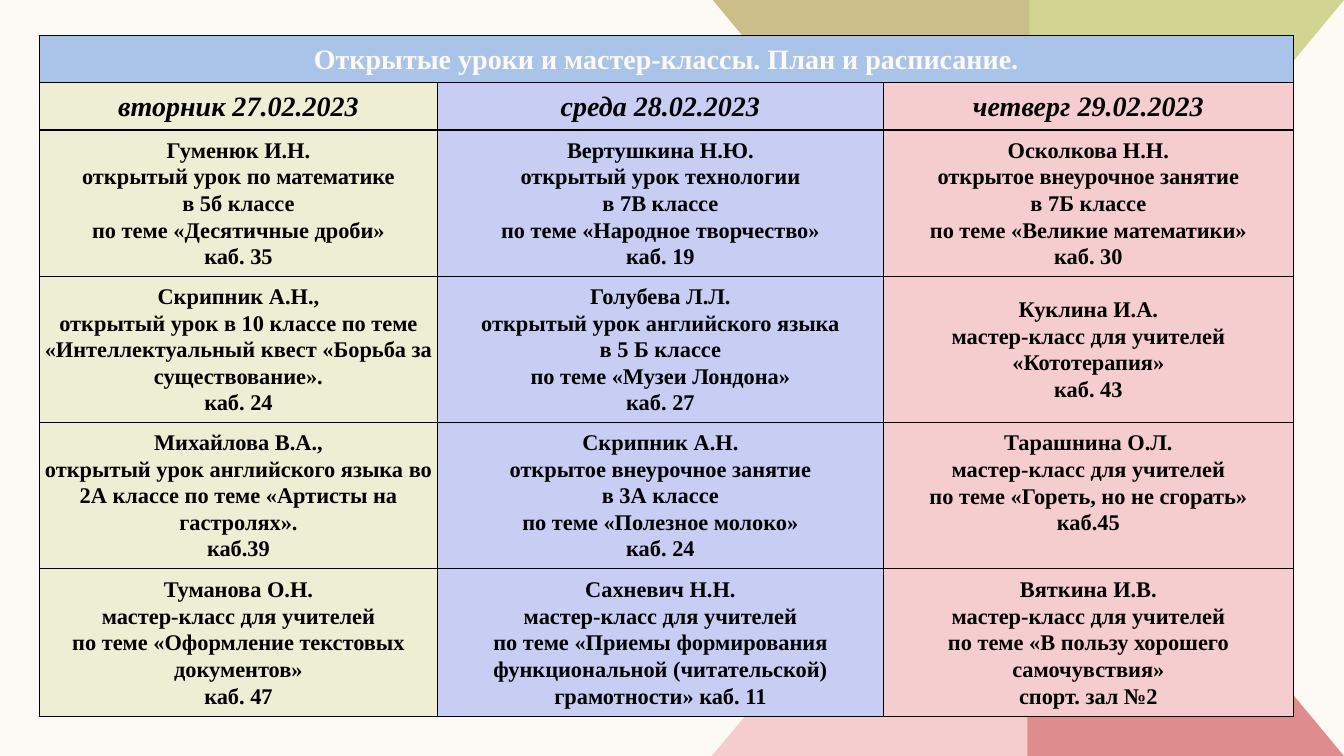
import pptx
import pptx.dml.color
import pptx.enum.text
import pptx.oxml.ns
import pptx.util
from lxml import etree
from pptx.util import Inches

FONT = "Times New Roman"
CREAM, BLACK = "FDFAF6", "000000"
TITLE = "Открытые уроки и мастер-классы. План и расписание."
TITLE_FILL = "AAC3E8"
DAY_FILLS = ["EDEED3", "C8CDF3", "F5CDCE"]
DAYS = ["вторник 27.02.2023", "среда 28.02.2023", "четверг 29.02.2023"]
LESSONS = [
    [
        "Гуменюк И.Н.\nоткрытый урок по математике\nв 5б классе\n"
        "по теме «Десятичные дроби»\nкаб. 35",
        "Вертушкина Н.Ю.\nоткрытый урок технологии\nв 7В классе\n"
        "по теме «Народное творчество»\nкаб. 19",
        "Осколкова Н.Н.\nоткрытое внеурочное занятие\nв 7Б классе\n"
        "по теме «Великие математики»\nкаб. 30",
    ],
    [
        "Скрипник А.Н.,\nоткрытый урок в 10 классе по теме "
        "«Интеллектуальный квест «Борьба за существование».\nкаб. 24",
        "Голубева Л.Л.\nоткрытый урок английского языка\nв 5 Б классе\n"
        "по теме «Музеи Лондона»\nкаб. 27",
        "Куклина И.А.\nмастер-класс для учителей\n«Кототерапия»\nкаб. 43",
    ],
    [
        "Михайлова В.А.,\nоткрытый урок английского языка во 2А классе "
        "по теме «Артисты на гастролях».\nкаб.39",
        "Скрипник А.Н.\nоткрытое внеурочное занятие\nв 3А классе\n"
        "по теме «Полезное молоко»\nкаб. 24",
        "Тарашнина О.Л.\nмастер-класс для учителей\n"
        "по теме «Гореть, но не сгорать»\nкаб.45",
    ],
    [
        "Туманова О.Н.\nмастер-класс для учителей\n"
        "по теме «Оформление текстовых документов»\nкаб. 47",
        "Сахневич Н.Н.\nмастер-класс для учителей\nпо теме «Приемы "
        "формирования функциональной (читательской) грамотности» каб. 11",
        "Вяткина И.В.\nмастер-класс для учителей\n"
        "по теме «В пользу хорошего самочувствия»\nспорт. зал №2",
    ],
]
COL_WIDTHS = [3.95, 4.42, 4.07]
ROW_HEIGHTS = [0.47, 0.47, 1.45, 1.45, 1.45, 1.47]


def rgb(value):
    """Return the colour of a hex string."""
    return pptx.dml.color.RGBColor.from_string(value)


def add_triangle(s, points, color):
    """Draw a plain filled triangle through three points in inches."""
    start, *rest = [(Inches(x), Inches(y)) for x, y in points]
    builder = s.shapes.build_freeform(*start)
    builder.add_line_segments(rest, close=True)
    sp = builder.convert_to_shape()
    sp.shadow.inherit = False
    sp.fill.solid()
    sp.fill.fore_color.rgb = rgb(color)
    sp.line.fill.background()


def set_borders(cell):
    """Give a cell a thin black line on every side."""
    tc_pr = cell._tc.get_or_add_tcPr()
    qn = pptx.oxml.ns.qn
    for side in ("a:lnL", "a:lnR", "a:lnT", "a:lnB"):
        ln = etree.SubElement(tc_pr, qn(side), w=str(pptx.util.Pt(1)))
        fill = etree.SubElement(ln, qn("a:solidFill"))
        etree.SubElement(fill, qn("a:srgbClr"), val=BLACK)


def style_cell(cell, fill):
    """Set the borders, fill, margins and anchor of a cell."""
    set_borders(cell)
    cell.fill.solid()
    cell.fill.fore_color.rgb = rgb(fill)
    cell.margin_left = cell.margin_right = Inches(0.04)
    cell.margin_top = cell.margin_bottom = 0
    cell.vertical_anchor = pptx.enum.text.MSO_ANCHOR.MIDDLE


def write_cell(cell, text, size, color=BLACK, italic=False):
    """Write centred bold lines into a cell."""
    cell.text_frame.text = text
    for p in cell.text_frame.paragraphs:
        p.alignment = pptx.enum.text.PP_ALIGN.CENTER
        p.line_spacing = 1.07
        p.font.name = FONT
        p.font.size = pptx.util.Pt(size)
        p.font.bold = True
        p.font.italic = italic
        p.font.color.rgb = rgb(color)


def add_schedule(s):
    """Add the table of open lessons by day."""
    frame = s.shapes.add_table(
        len(ROW_HEIGHTS), len(COL_WIDTHS), Inches(0.39), Inches(0.35),
        Inches(sum(COL_WIDTHS)), Inches(sum(ROW_HEIGHTS)))
    table = frame.table
    table.first_row = table.horz_banding = False
    for column, width in zip(table.columns, COL_WIDTHS):
        column.width = Inches(width)
    for row, height in zip(table.rows, ROW_HEIGHTS):
        row.height = Inches(height)

    for i, row in enumerate(table.rows):
        for cell, day_fill in zip(row.cells, DAY_FILLS):
            style_cell(cell, day_fill if i else TITLE_FILL)
    table.cell(0, 0).merge(table.cell(0, 2))
    write_cell(table.cell(0, 0), TITLE, 20, CREAM)
    for j, day in enumerate(DAYS):
        write_cell(table.cell(1, j), day, 20, italic=True)
    for i, lessons in enumerate(LESSONS, start=2):
        for j, lesson in enumerate(lessons):
            write_cell(table.cell(i, j), lesson, 16)
    table.cell(4, 2).margin_bottom = Inches(0.26)


def main():
    """Build the slide and save it."""
    prs = pptx.Presentation()
    prs.slide_width, prs.slide_height = Inches(13.33), Inches(7.5)
    s = prs.slides.add_slide(prs.slide_layouts[6])
    s.background.fill.solid()
    s.background.fill.fore_color.rgb = rgb(CREAM)
    for middle, corner, edge, tip, color in [
        (10.21, 7.06, 7.5, 3.72, "F5CDCE"),
        (10.19, 13.33, 7.5, 3.72, "DE8C8C"),
        (10.19, 13.33, 0, 3.79, "D2D592"),
        (10.21, 7.07, 0, 3.79, "CCBE89"),
    ]:
        add_triangle(s, [(middle, tip), (corner, edge), (middle, edge)], color)
    add_schedule(s)
    prs.save("out.pptx")


if __name__ == "__main__":
    main()
